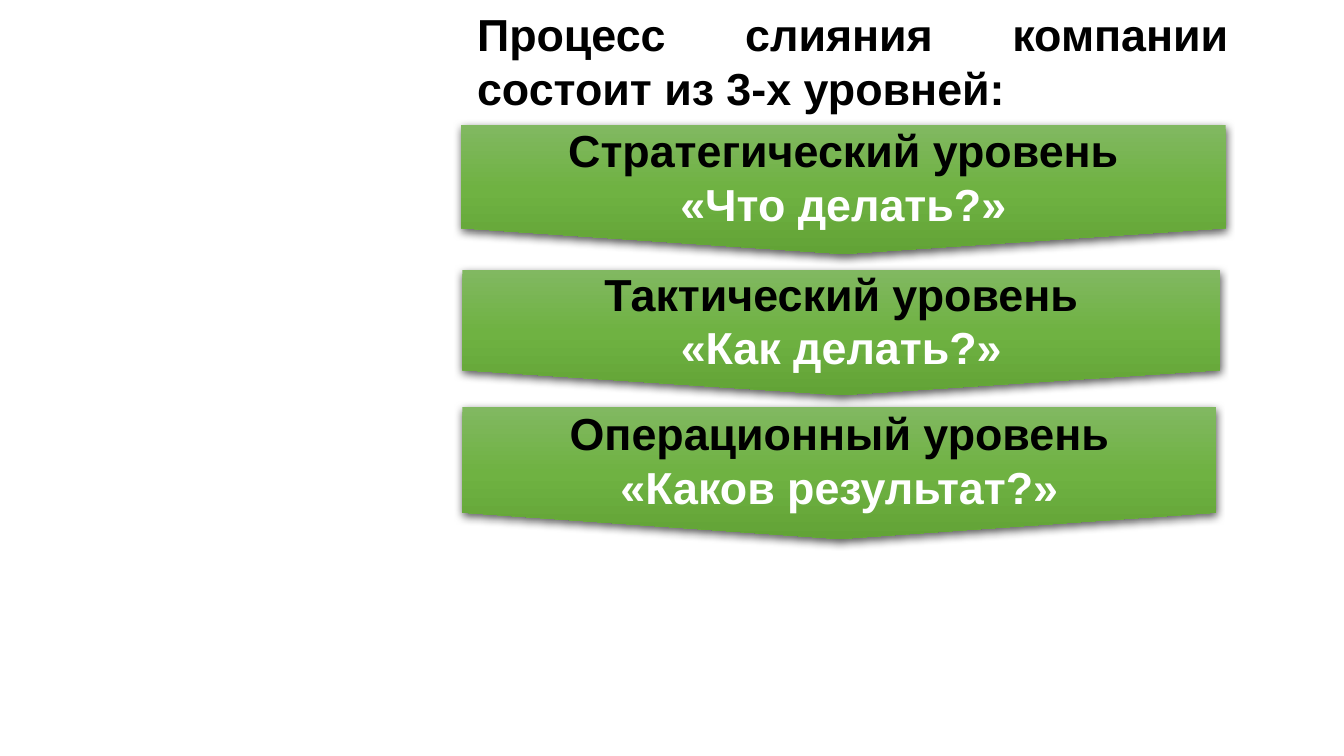
from typing import NamedTuple

from lxml.etree import SubElement
from pptx import Presentation
from pptx.dml.color import RGBColor
from pptx.enum.shapes import MSO_SHAPE
from pptx.enum.text import MSO_ANCHOR, MSO_AUTO_SIZE, PP_ALIGN
from pptx.oxml.ns import qn
from pptx.util import Inches, Pt

COLORS = {"dark": "000000", "light": "FFFFFF",
          "top": "81B861", "mid": "6FB242", "low": "62A336"}
STOPS = [(0, "top"), (50, "mid"), (100, "low")]
DOWN = "5400000"  # 90 degrees
WIDTH = 10


class Level(NamedTuple):
    left: float
    top: float
    width: float
    height: float
    name: str
    ask: str


LEVELS = [
    Level(3.43, 0.93, 5.69, 0.96, "Стратегический уровень", "«Что делать?»"),
    Level(3.44, 2.01, 5.64, 0.93, "Тактический уровень", "«Как делать?»"),
    Level(3.44, 3.03, 5.61, 0.98, "Операционный уровень", "«Каков результат?»"),
]


def add_text(para, text: str, color: str, align) -> None:
    para.alignment = align
    run = para.add_run()
    run.text = text
    font = run.font
    font.name, font.size, font.bold = "Arial", Pt(24), True
    font.color.rgb = RGBColor.from_string(COLORS[color])


def add_color(parent, color: str):
    return SubElement(parent, qn("a:srgbClr"), val=COLORS[color])


def set_fill(shape) -> None:
    """Give the shape a three-stop gradient running downwards."""
    shape.fill.gradient()
    grad = shape._element.spPr.find(qn("a:gradFill"))
    for child in list(grad):
        grad.remove(child)
    stops = SubElement(grad, qn("a:gsLst"))
    for place, color in STOPS:
        add_color(SubElement(stops, qn("a:gs"), pos=str(place * 1000)), color)
    SubElement(grad, qn("a:lin"), ang=DOWN, scaled="0")


def set_shadow(shape) -> None:
    shape.shadow.inherit = False
    effects = shape._element.spPr.find(qn("a:effectLst"))
    outer = SubElement(effects, qn("a:outerShdw"), blurRad=str(Pt(4.5)),
                       dist=str(Pt(1.5)), dir=DOWN, algn="ctr", rotWithShape="0")
    SubElement(add_color(outer, "dark"), qn("a:alpha"), val="63000")


def add_level(slide, level: Level) -> None:
    box = [Inches(n) for n in level[:4]]
    shape = slide.shapes.add_shape(MSO_SHAPE.FLOWCHART_OFFPAGE_CONNECTOR, *box)
    set_fill(shape)
    shape.line.fill.background()
    set_shadow(shape)
    frame = shape.text_frame
    frame.word_wrap = True
    frame.vertical_anchor = MSO_ANCHOR.MIDDLE
    add_text(frame.paragraphs[0], level.name, "dark", PP_ALIGN.CENTER)
    add_text(frame.add_paragraph(), level.ask, "light", PP_ALIGN.CENTER)


def add_title(slide, text: str) -> None:
    title = slide.shapes.title
    title.left, title.top = Inches(3.45), Inches(0)
    title.width, title.height = Inches(5.79), Inches(0.91)
    frame = title.text_frame
    frame.word_wrap = True
    frame.auto_size = MSO_AUTO_SIZE.SHAPE_TO_FIT_TEXT
    frame.vertical_anchor = MSO_ANCHOR.TOP
    add_text(frame.paragraphs[0], text, "dark", PP_ALIGN.JUSTIFY)


def main() -> None:
    deck = Presentation()
    # Widescreen page, 16 to 9
    deck.slide_width, deck.slide_height = Inches(WIDTH), Inches(WIDTH * 9 / 16)
    slide = deck.slides.add_slide(deck.slide_layouts[5])

    # Heading
    add_title(slide, "Процесс слияния компании состоит из 3-х уровней:")

    # Three levels, from strategy to operations
    for level in LEVELS:
        add_level(slide, level)

    deck.save("out.pptx")


if __name__ == "__main__":
    main()
